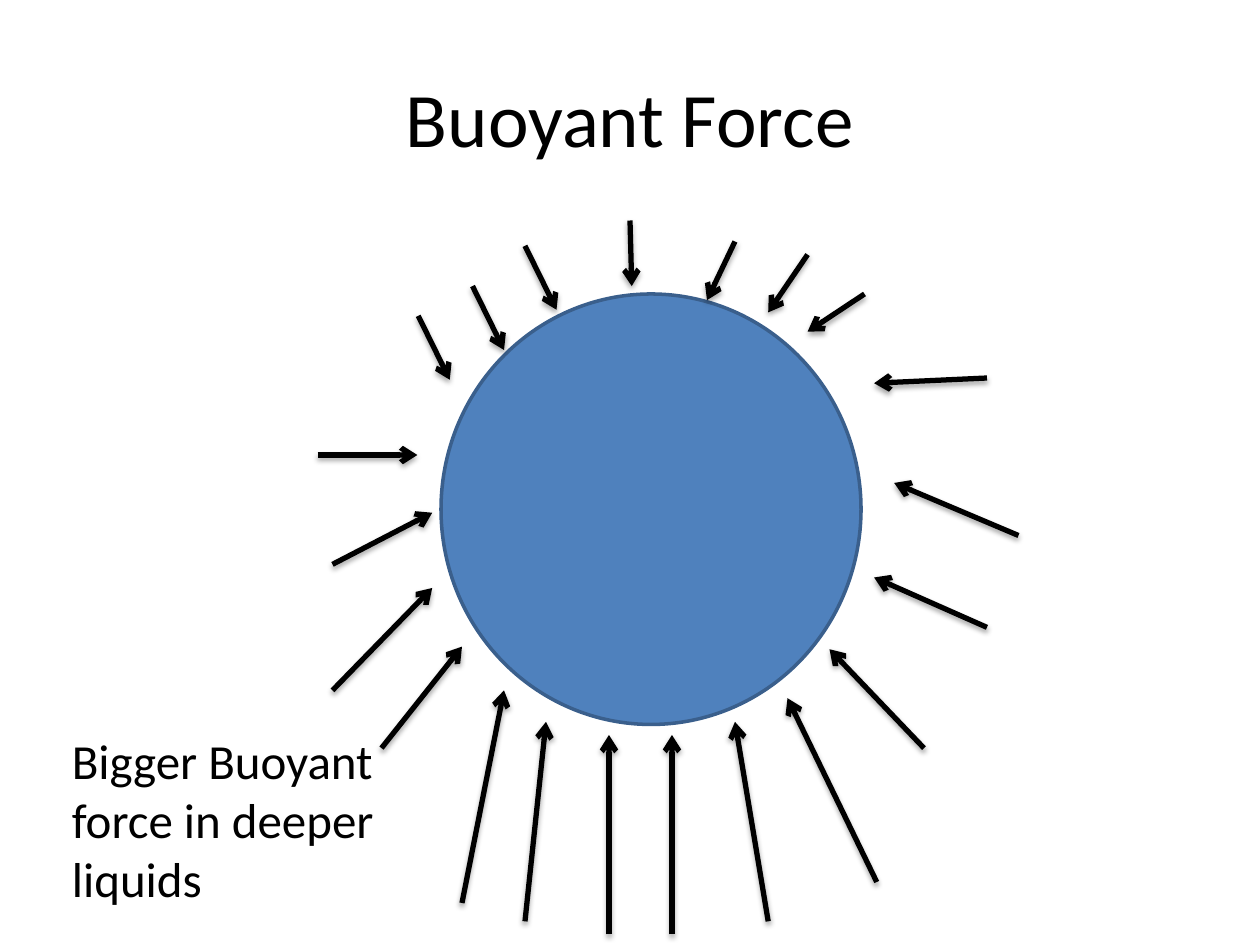
from lxml.etree import SubElement
from pptx import Presentation
from pptx.dml.color import RGBColor
from pptx.enum.shapes import MSO_CONNECTOR as Connector, MSO_SHAPE as Shape
from pptx.enum.text import MSO_ANCHOR as Anchor, PP_ALIGN as Align
from pptx.oxml.ns import qn
from pptx.util import Pt

BLACK = RGBColor(0x00, 0x00, 0x00)
BLUE = RGBColor(0x4F, 0x81, 0xBD)
DARK_BLUE = RGBColor(0x3A, 0x5F, 0x8C)

# Each arrow: tail x, tail y, tip x, tip y
DEEP_ARROWS = [
    (384, 534, 384, 420), (439, 526.5, 420, 412.5), (348, 534, 348, 420),
    (300, 526.5, 312, 412.5), (501, 504, 450, 399), (264, 516, 288, 394.5),
]
SIDE_ARROWS = [
    (528, 427.5, 474, 371), (564, 358.5, 499.5, 330), (582, 306, 511, 276),
    (564, 216, 499.5, 219), (218, 427.5, 264, 369.5), (190, 394.5, 247, 336),
    (190, 322.5, 247, 293), (181.5, 260, 238.5, 260),
]
SHALLOW_ARROWS = [
    (494, 168, 461.5, 189.5), (420, 138, 404, 171.5),
    (461.5, 145.5, 439, 178.5), (360, 126, 361, 163.5),
    (300, 140.5, 318, 177), (270, 163.5, 288, 200), (239, 180.5, 257, 217),
]


def write_text(frame, text, *, font, size, color=BLACK, align=Align.LEFT,
               anchor=Anchor.TOP):
    frame.word_wrap = True
    frame.vertical_anchor = anchor
    paragraph = frame.paragraphs[0]
    paragraph.alignment = align
    run = paragraph.add_run()
    run.text = text
    run.font.name = font
    run.font.size = Pt(size)
    run.font.color.rgb = color


def add_soft_shadow(connector):
    effects = SubElement(connector._element.spPr, qn("a:effectLst"))
    shadow = SubElement(effects, qn("a:outerShdw"), blurRad=str(Pt(3.1)),
                        dist=str(Pt(1.8)), dir="5400000", rotWithShape="0")
    color = SubElement(shadow, qn("a:srgbClr"), val=str(BLACK))
    SubElement(color, qn("a:alpha"), val="35000")


class SlideBuilder:
    font = "Calibri"
    arrow_width = 3
    outline_width = 2

    def __init__(self, slide):
        self.slide = slide

    def text(self, left, top, width, height, text, **style):
        box = self.slide.shapes.add_textbox(*map(Pt, (left, top, width, height)))
        write_text(box.text_frame, text, font=self.font, **style)

    def ellipse(self, left, top, width, height, fill, outline):
        shape = self.slide.shapes.add_shape(
            Shape.OVAL, *map(Pt, (left, top, width, height)))
        shape.shadow.inherit = False
        shape.fill.solid()
        shape.fill.fore_color.rgb = fill
        shape.line.color.rgb = outline
        shape.line.width = Pt(self.outline_width)

    def arrow(self, *ends):
        connector = self.slide.shapes.add_connector(
            Connector.STRAIGHT, *map(Pt, ends))
        connector.line.color.rgb = BLACK
        connector.line.width = Pt(self.arrow_width)
        SubElement(connector.line._get_or_add_ln(), qn("a:tailEnd"), type="arrow")
        add_soft_shadow(connector)


def main():
    presentation = Presentation()
    presentation.slide_width = Pt(720)
    presentation.slide_height = Pt(540)
    blank = presentation.slide_layouts[6]
    builder = SlideBuilder(presentation.slides.add_slide(blank))

    builder.text(36, 21.6, 648, 90, "Buoyant Force", size=44,
                 align=Align.CENTER, anchor=Anchor.MIDDLE)
    builder.ellipse(252, 168, 240, 246, fill=BLUE, outline=DARK_BLUE)
    for ends in DEEP_ARROWS + SIDE_ARROWS + SHALLOW_ARROWS:
        builder.arrow(*ends)
    builder.text(34, 414, 206.5, 108.5, "Bigger Buoyant force in deeper liquids",
                 size=28)

    presentation.save("out.pptx")


if __name__ == "__main__":
    main()
